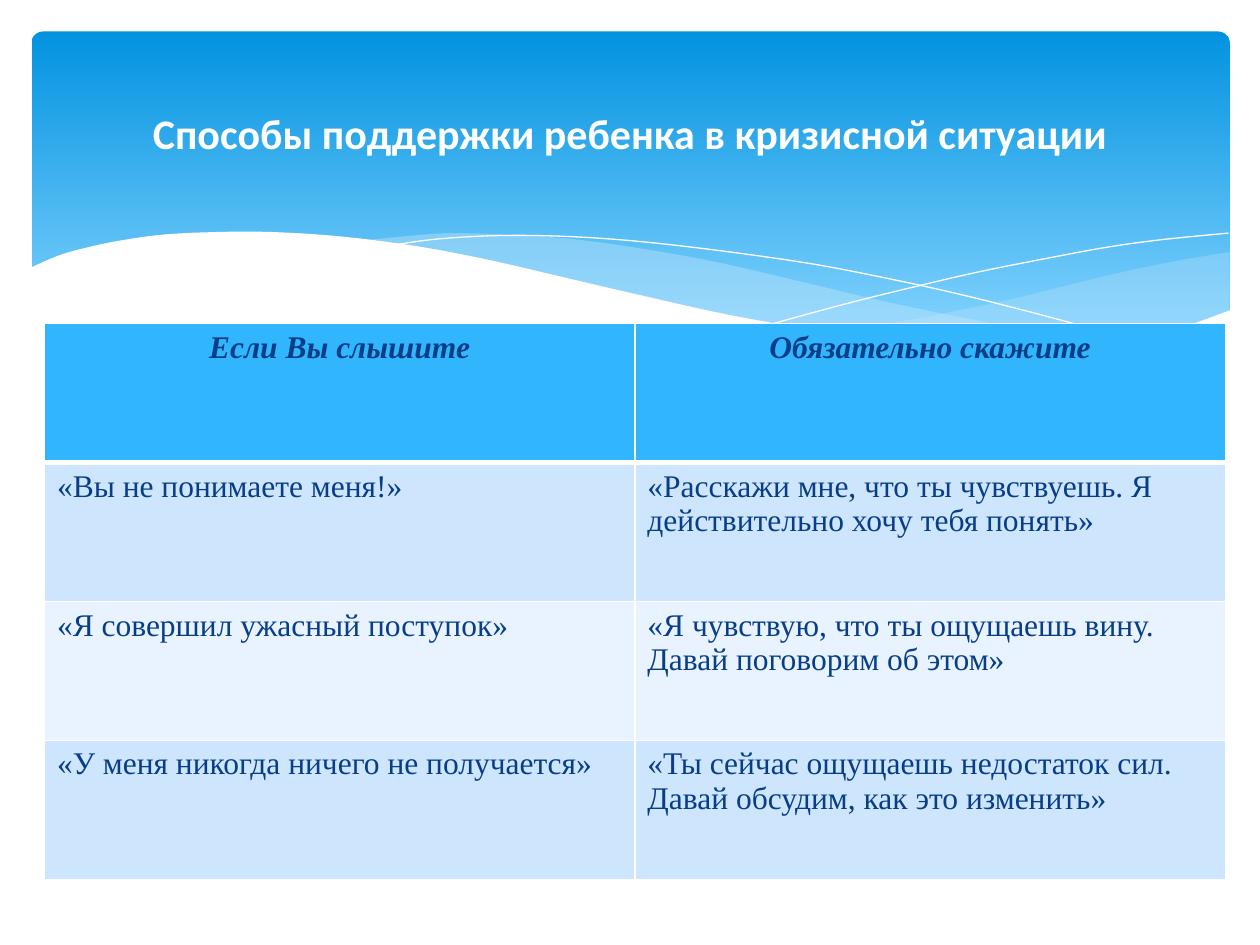
from dataclasses import dataclass

from lxml import etree
from pptx import Presentation
from pptx.dml.color import RGBColor
from pptx.enum import shapes, text
from pptx.oxml import ns
from pptx.util import Pt


@dataclass(frozen=True)
class Theme:
    white: str = "FFFFFF"
    ink: str = "073E87"
    sky_top: str = "0293E0"
    sky_bottom: str = "83D3FE"
    veil: str = "C6E7FC"
    header: str = "31B6FD"
    bands: tuple = ("CEE5FE", "E8F3FF")
    title_font: str = "Calibri"
    title_size: int = 24
    table_font: str = "Times New Roman"
    table_size: int = 18


THEME = Theme()

TITLE = "Способы поддержки ребенка в кризисной ситуации"
ROWS = [
    ("Если Вы слышите", "Обязательно скажите"),
    ("«Вы не понимаете меня!»",
     "«Расскажи мне, что ты чувствуешь. Я действительно хочу тебя понять»"),
    ("«Я совершил ужасный поступок»",
     "«Я чувствую, что ты ощущаешь вину. Давай поговорим об этом»"),
    ("«У меня никогда ничего не получается»",
     "«Ты сейчас ощущаешь недостаток сил. Давай обсудим, как это изменить»"),
]

# Knots of the wave edges, in points
RIGHT_VEIL_TOP = [(702.7, 144), (673, 149), (641.5, 155.5), (620, 160.6),
                  (579.6, 170.6), (542, 178.6), (508, 185), (476, 190.8)]
RIGHT_VEIL_BOTTOM = [(476, 190.8), (507.6, 195), (536.4, 198), (570, 199.5),
                     (601, 199.5), (634.3, 196.6), (663, 190.8), (683, 185),
                     (702.7, 177.8)]
LONG_VEIL_TOP = [(643, 196.6), (602.6, 190.8), (558, 183), (508, 172.8),
                 (453, 159.8), (409.7, 149.8), (370, 142.6), (334.8, 137.5),
                 (302.4, 134.6), (260, 133.2), (236, 134.6), (206, 137.5)]
LONG_VEIL_BOTTOM = [(206, 137.5), (246, 143.3), (291, 152), (323, 159.8),
                    (381.6, 172.8), (432.7, 183.6), (479, 191.5), (520, 197.3),
                    (556.6, 199.5), (596, 200.2), (643, 196.6)]
FALLING_LINE = [(222.5, 140.4), (247.7, 136.8), (278.6, 134.8), (311.8, 134.7),
                (352, 136.8), (400, 141.8), (458, 149.8), (500.4, 157.7),
                (547, 167.8), (598, 180.7), (653, 195.8)]
RISING_LINE = [(441.4, 185), (483.8, 173.5), (518.4, 164.9), (558.7, 155.5),
               (602, 146.9), (634.3, 141), (665.3, 136.8), (702, 133.2)]
WHITE_WAVE = [(703.4, 177.1), (676.8, 186.5), (647.3, 193.7), (612, 198),
              (582.5, 199.4), (548, 198), (509.8, 194.4), (466.6, 188.6),
              (416.9, 180), (362, 167.8), (321.8, 158.4), (281.5, 149),
              (244.8, 141.8), (210, 136.8), (180, 133.9), (152, 132.5),
              (127.4, 132.5), (95, 133.9), (68.4, 137.5), (48.2, 141.8),
              (33, 146.2), (16.6, 153.4)]
WHITE_BASE = [(16.6, 236.9), (703.4, 236.9)]


def rgb(code):
    return RGBColor.from_string(code)


def smooth(knots, steps=6):
    """Return points on a Catmull-Rom curve through the knots."""
    padded = [knots[0], *knots, knots[-1]]
    points = []
    for a, b, c, d in zip(padded, padded[1:], padded[2:], padded[3:]):
        for step in range(steps):
            t = step / steps
            points.append(tuple(
                (2 * q + (r - p) * t + (2 * p - 5 * q + 4 * r - s) * t ** 2
                 + (3 * q - p - 3 * r + s) * t ** 3) / 2
                for p, q, r, s in zip(a, b, c, d)))
    return points + [knots[-1]]


def add_outline(page, points, close):
    start, *rest = [(Pt(x), Pt(y)) for x, y in points]
    builder = page.shapes.build_freeform(*start)
    builder.add_line_segments(rest, close=close)
    shape = builder.convert_to_shape()
    shape.shadow.inherit = False
    return shape


def add_wave(page, points, color, opacity=100):
    wave = add_outline(page, points, close=True)
    wave.fill.solid()
    wave.fill.fore_color.rgb = rgb(color)
    wave.line.fill.background()
    if opacity < 100:
        tint = wave.element.spPr.find(".//" + ns.qn("a:srgbClr"))
        etree.SubElement(tint, ns.qn("a:alpha"), val=str(opacity * 1000))


def add_hairline(page, knots):
    line = add_outline(page, smooth(knots), close=False)
    line.fill.background()
    line.line.color.rgb = rgb(THEME.white)
    line.line.width = Pt(0)


def add_banner(page):
    banner = page.shapes.add_shape(shapes.MSO_SHAPE.ROUNDED_RECTANGLE,
                                   Pt(18), Pt(18), Pt(684.7), Pt(194.4))
    banner.adjustments[0] = 0.034
    banner.shadow.inherit = False
    banner.line.fill.background()
    banner.fill.gradient()
    banner.fill.gradient_angle = 270
    top, bottom = banner.fill.gradient_stops
    top.color.rgb, top.position = rgb(THEME.sky_top), 0
    bottom.color.rgb, bottom.position = rgb(THEME.sky_bottom), 0.9


def set_borders(cell, **widths):
    """Draw white borders; widths are points by side: L, R, T, B."""
    props = cell._tc.get_or_add_tcPr()
    for index, side in enumerate("LRTB"):
        line = etree.Element(ns.qn("a:ln" + side), w=str(Pt(widths.get(side, 1))))
        fill = etree.SubElement(line, ns.qn("a:solidFill"))
        etree.SubElement(fill, ns.qn("a:srgbClr"), val=THEME.white)
        props.insert(index, line)


def fill_cell(cell, words, row):
    is_header = row == 0
    cell.text = words
    cell.fill.solid()
    cell.fill.fore_color.rgb = rgb(
        THEME.header if is_header else THEME.bands[(row - 1) % 2])
    para = cell.text_frame.paragraphs[0]
    if is_header:
        para.alignment = text.PP_ALIGN.CENTER
    set_font(para.font, THEME.table_font, THEME.table_size, THEME.ink, is_header)
    para.font.italic = is_header
    set_borders(cell, T=3 if row == 1 else 1, B=3 if is_header else 1)


def set_font(font, name, size, color, bold):
    font.name, font.size, font.bold = name, Pt(size), bold
    font.color.rgb = rgb(color)


def add_phrase_table(page):
    frame = page.shapes.add_table(len(ROWS), len(ROWS[0]),
                                  Pt(25.4), Pt(185), Pt(674.8), Pt(317.6))
    for row, phrases in enumerate(ROWS):
        for column, words in enumerate(phrases):
            fill_cell(frame.table.cell(row, column), words, row)


def place_title(page):
    """Fill the title placeholder and bring it to the front."""
    title = page.shapes.title
    title.left, title.top, title.width, title.height = Pt(36), Pt(26.6), Pt(648), Pt(98.6)
    title.text_frame.text = TITLE
    title.text_frame.vertical_anchor = text.MSO_ANCHOR.MIDDLE
    para = title.text_frame.paragraphs[0]
    para.alignment = text.PP_ALIGN.CENTER
    set_font(para.font, THEME.title_font, THEME.title_size, THEME.white, True)
    title.element.getparent().append(title.element)


def main():
    deck = Presentation()
    deck.slide_width, deck.slide_height = Pt(720), Pt(540)
    page = deck.slides.add_slide(deck.slide_layouts[5])
    add_banner(page)
    add_wave(page, smooth(RIGHT_VEIL_TOP) + smooth(RIGHT_VEIL_BOTTOM), THEME.veil, 29)
    add_wave(page, smooth(LONG_VEIL_TOP) + smooth(LONG_VEIL_BOTTOM), THEME.veil, 40)
    add_hairline(page, FALLING_LINE)
    add_hairline(page, RISING_LINE)
    add_wave(page, smooth(WHITE_WAVE) + WHITE_BASE, THEME.white)
    add_phrase_table(page)
    place_title(page)
    deck.save("out.pptx")


if __name__ == "__main__":
    main()
